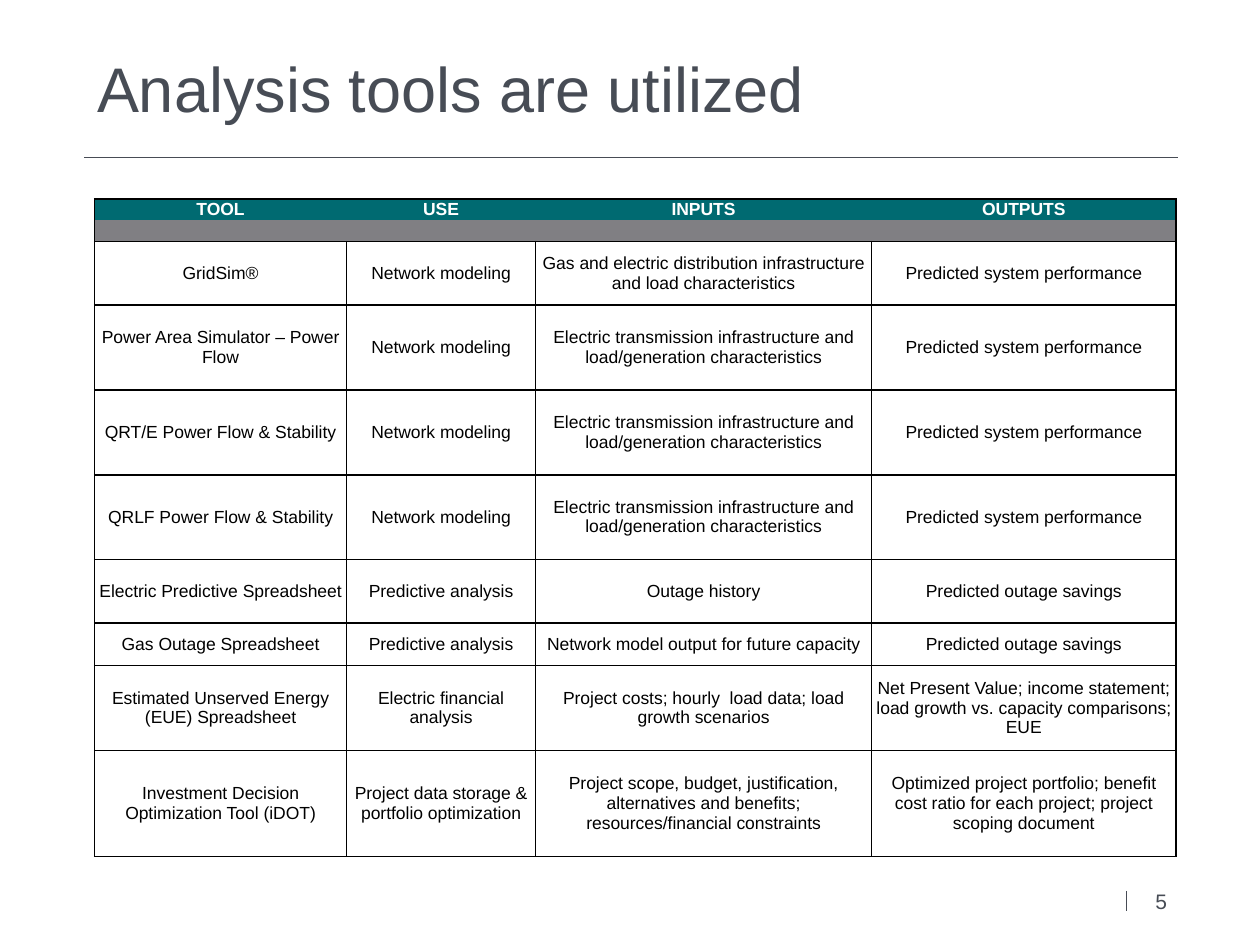
"""Build the slide that lists the analysis tools in a table."""
from lxml.etree import SubElement
from pptx import Presentation
from pptx.dml.color import RGBColor
from pptx.enum.shapes import MSO_CONNECTOR as Connector
from pptx.enum.text import MSO_ANCHOR as Anchor, MSO_AUTO_SIZE as AutoSize, PP_ALIGN as Align
from pptx.oxml.ns import qn
from pptx.util import Pt

SLATE, TEAL, GRAY, WHITE, BLACK = "474C55", "006A71", "807F83", "FFFFFF", "000000"
TRANSMISSION = "Electric transmission infrastructure and load/generation characteristics"
PERFORMANCE = "Predicted system performance"
SAVINGS = "Predicted outage savings"
HEADINGS = ["TOOL", "USE", "INPUTS", "OUTPUTS"]
TOOLS = [
    ["GridSim®", "Network modeling",
     "Gas and electric distribution infrastructure and load characteristics", PERFORMANCE],
    ["Power Area Simulator – Power Flow", "Network modeling", TRANSMISSION, PERFORMANCE],
    ["QRT/E Power Flow & Stability", "Network modeling", TRANSMISSION, PERFORMANCE],
    ["QRLF Power Flow & Stability", "Network modeling", TRANSMISSION, PERFORMANCE],
    ["Electric Predictive Spreadsheet", "Predictive analysis", "Outage history", SAVINGS],
    ["Gas Outage Spreadsheet", "Predictive analysis",
     "Network model output for future capacity", SAVINGS],
    ["Estimated Unserved Energy (EUE) Spreadsheet", "Electric financial analysis",
     "Project costs; hourly  load data; load growth scenarios",
     "Net Present Value; income statement; load growth vs. capacity comparisons; EUE"],
    ["Investment Decision Optimization Tool (iDOT)",
     "Project data storage & portfolio optimization",
     "Project scope, budget, justification, alternatives and benefits; "
     "resources/financial constraints",
     "Optimized project portfolio; benefit cost ratio for each project; "
     "project scoping document"],
]
COLUMN_WIDTHS = [144, 108, 192, 174]
ROW_UNIT = 12.12
ROW_UNITS = [1, 1, 3, 4, 4, 4, 3, 2, 4, 5]


def color(value):
    """Return the RGB colour for a hex string."""
    return RGBColor.from_string(value)


def assign(target, values):
    """Set each named attribute of the target."""
    for name, value in values.items():
        setattr(target, name, value)


class SlideBuilder:
    """Hold the text style and the current slide."""

    font = "Arial"
    cell_format = {"margin_left": Pt(1.44), "margin_right": Pt(1.44), "margin_top": 0,
                   "margin_bottom": 0, "vertical_anchor": Anchor.MIDDLE}
    frame_format = {"word_wrap": True, "auto_size": AutoSize.NONE,
                    "vertical_anchor": Anchor.MIDDLE}

    def __init__(self, deck):
        """Add a title-only page to the deck."""
        self.page = deck.slides.add_slide(deck.slide_layouts[5])

    def text(self, frame, text, size, ink, align, bold=False):
        """Put one styled paragraph into a text frame."""
        para = frame.paragraphs[0]
        para.alignment = align
        span = para.add_run()
        span.text = text
        assign(span.font, {"name": self.font, "size": Pt(size), "bold": bold})
        span.font.color.rgb = color(ink)

    def title(self, text, left, top, width, height):
        """Place and fill the title placeholder."""
        box = self.page.shapes.title
        assign(box, {"left": Pt(left), "top": Pt(top),
                     "width": Pt(width), "height": Pt(height)})
        assign(box.text_frame, self.frame_format)
        self.text(box.text_frame, text, 36, SLATE, Align.LEFT)

    def label(self, text, left, top, width, height):
        """Add a small right-aligned text box."""
        box = self.page.shapes.add_textbox(Pt(left), Pt(top), Pt(width), Pt(height))
        assign(box.text_frame, self.frame_format)
        self.text(box.text_frame, text, 12, SLATE, Align.RIGHT)

    def rule(self, *ends):
        """Add a thin straight line."""
        line = self.page.shapes.add_connector(Connector.STRAIGHT, *map(Pt, ends))
        line.line.width = Pt(0.75)
        line.line.color.rgb = color(SLATE)
        SubElement(line._element.spPr, qn("a:effectLst"))

    def borders(self, cell, sides):
        """Draw the named cell sides and clear the others."""
        properties = cell._tc.get_or_add_tcPr()
        for side in "LRTB":
            edge = SubElement(properties, qn(f"a:ln{side}"), w=str(Pt(1)))
            if side in sides:
                fill = SubElement(edge, qn("a:solidFill"))
                SubElement(fill, qn("a:srgbClr"), val=BLACK)
            else:
                SubElement(edge, qn("a:noFill"))

    def cell(self, cell, text, fill, sides, ink=BLACK, bold=False):
        """Format and fill one table cell."""
        assign(cell, self.cell_format)
        self.borders(cell, sides)
        cell.fill.solid()
        cell.fill.fore_color.rgb = color(fill)
        if text:
            self.text(cell.text_frame, text, 10, ink, Align.CENTER, bold)
        else:
            SubElement(cell.text_frame.paragraphs[0]._p, qn("a:endParaRPr"), sz="1000")

    def table(self, left, top):
        """Add the table with its heading, band and tool rows."""
        heights = [ROW_UNIT * units for units in ROW_UNITS]
        frame = self.page.shapes.add_table(len(heights), len(COLUMN_WIDTHS), Pt(left), Pt(top),
                                           Pt(sum(COLUMN_WIDTHS)), Pt(sum(heights)))
        table = frame.table
        assign(table, {"first_row": False, "horz_banding": False})
        for column, width in zip(table.columns, COLUMN_WIDTHS):
            column.width = Pt(width)
        for row, height in zip(table.rows, heights):
            row.height = Pt(height)
        heading_sides = ["LT", "T", "T", "TR"]
        for index, (text, sides) in enumerate(zip(HEADINGS, heading_sides)):
            self.cell(table.cell(0, index), text, TEAL, sides, WHITE, True)
            self.cell(table.cell(1, index), "", GRAY, "LRB")
        table.cell(1, 0).merge(table.cell(1, len(HEADINGS) - 1))
        for row, tool in enumerate(TOOLS, 2):
            for index, text in enumerate(tool):
                self.cell(table.cell(row, index), text, WHITE, "LRTB")


def main():
    """Build and save the deck."""
    deck = Presentation()
    assign(deck, {"slide_width": Pt(720), "slide_height": Pt(540)})
    builder = SlideBuilder(deck)
    builder.label("5", 643.68, 500.4, 30.24, 28.8)
    builder.rule(643.68, 509.04, 643.68, 520.56)
    builder.rule(48.24, 90, 673.2, 90)
    builder.title("Analysis tools are utilized", 48.24, 21.6, 625.68, 56.16)
    builder.table(54, 113.76)
    deck.save("out.pptx")


if __name__ == "__main__":
    main()
